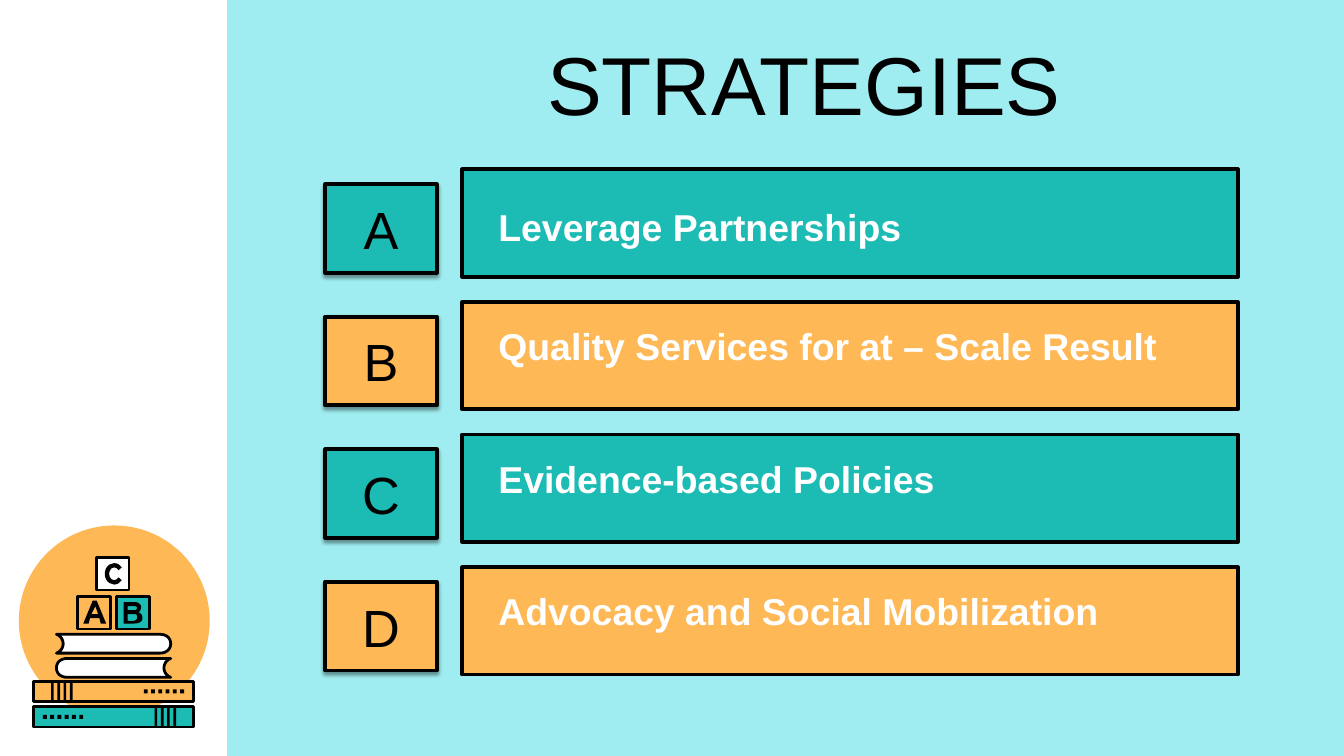
from dataclasses import dataclass

from lxml import etree
from pptx import Presentation
from pptx.dml.color import RGBColor
from pptx.enum.shapes import MSO_SHAPE
from pptx.enum.text import MSO_ANCHOR, PP_ALIGN
from pptx.oxml.ns import qn
from pptx.util import Inches, Pt

RECT, OVAL, ARC = MSO_SHAPE.RECTANGLE, MSO_SHAPE.OVAL, MSO_SHAPE.BLOCK_ARC
TOP, MIDDLE = MSO_ANCHOR.TOP, MSO_ANCHOR.MIDDLE
CENTER, LEFT = PP_ALIGN.CENTER, PP_ALIGN.LEFT
COLORS = {"sky": "9FEDF0", "teal": "1CBBB4", "gold": "FEB856",
          "black": "000000", "white": "FFFFFF"}
WIDTH = 10
HEIGHT = WIDTH * 9 / 16
PITCH = 2.96 / 3
BOOK_LEFT, BOOK_WIDTH = 0.25, 1.19
MIRROR = 2 * BOOK_LEFT + BOOK_WIDTH


@dataclass
class Row:
    letter: str
    label: str
    color: str
    width: float
    drop: float = 0


@dataclass
class Block:
    left: float
    top: float
    color: str


ROWS = [
    Row("A", "Leverage Partnerships", "teal", 5.48, 0.1),
    Row("B", "Quality Services for at – Scale Result", "gold", 5.98),
    Row("C", "Evidence-based Policies", "teal", 5.2),
    Row("D", "Advocacy and Social Mobilization", "gold", 5.2),
]
BLOCKS = [Block(0.58, 4.44, "gold"), Block(0.87, 4.44, "teal"),
          Block(0.72, 4.15, "white")]
LETTER_A = [
    [(0.71, 4.51), (0.68, 4.57), (0.73, 4.57)],
    [(0.69, 4.47), (0.72, 4.47), (0.79, 4.64), (0.75, 4.64),
     (0.74, 4.6), (0.67, 4.6), (0.66, 4.64), (0.62, 4.64)],
]
LETTER_B = [
    [(0.95, 4.57), (0.95, 4.62), (1, 4.62),
     (1.02, 4.61, 1.02, 4.61, 1.02, 4.59), (1.02, 4.58, 1.02, 4.57, 1, 4.57)],
    [(0.95, 4.51), (0.95, 4.54), (1, 4.54),
     (1.01, 4.54, 1.02, 4.54, 1.02, 4.52), (1.02, 4.52, 1.01, 4.51, 1, 4.51)],
    [(0.92, 4.48), (1, 4.48), (1.04, 4.48, 1.05, 4.51, 1.05, 4.51),
     (1.05, 4.54, 1.04, 4.55, 1.03, 4.56), (1.05, 4.56, 1.06, 4.58, 1.06, 4.6),
     (1.06, 4.63, 1.03, 4.64, 1, 4.64), (0.92, 4.64)],
]
OPEN_BOOK = [
    [(0.42, 4.72), (1.19, 4.72), (1.24, 4.72, 1.27, 4.75, 1.27, 4.79),
     (1.27, 4.83, 1.24, 4.86, 1.19, 4.86), (0.42, 4.86),
     (0.45, 4.85, 0.47, 4.82, 0.47, 4.79), (0.47, 4.76, 0.45, 4.73, 0.42, 4.72)],
]


def paint(shape, fill: str, line: float = 0) -> None:
    """Set a shape's fill and black outline, without shadow."""
    shape.shadow.inherit = False
    shape.fill.solid()
    shape.fill.fore_color.rgb = RGBColor.from_string(COLORS[fill])
    if line:
        shape.line.color.rgb = RGBColor.from_string(COLORS["black"])
        shape.line.width = Pt(line)
    else:
        shape.line.fill.background()


def draw(slide, kind, left: float, top: float, width: float, height: float,
         fill: str, line: float = 0):
    """Draw a preset shape."""
    shape = slide.shapes.add_shape(
        kind, Inches(left), Inches(top), Inches(width), Inches(height))
    paint(shape, fill, line)
    return shape


def trace(contour: list) -> list:
    """Turn corners and cubic curves into a list of points."""
    points = []
    for part in contour:
        if len(part) == 2:
            points.append(part)
            continue
        start = points[-1]
        for step in range(1, 9):
            t = step / 8
            u = 1 - t
            points.append(tuple(
                u**3 * start[k] + 3 * u * u * t * part[k]
                + 3 * u * t * t * part[k + 2] + t**3 * part[k + 4]
                for k in (0, 1)))
    return points


def outline(slide, contours: list, fill: str, line: float = 0,
            turn: float = 0) -> None:
    """Draw closed contours, turned half round when a vertical sum is given."""
    pen = None
    for contour in contours:
        points = [(Inches(MIRROR - x), Inches(turn - y)) if turn
                  else (Inches(x), Inches(y)) for x, y in trace(contour)]
        if pen is None:
            pen = slide.shapes.build_freeform(*points[0], scale=1.0)
        else:
            pen.move_to(*points[0])
        pen.add_line_segments(points[1:], close=True)
    paint(pen.convert_to_shape(), fill, line)


def write(shape, text: str, size: float, color: str, align, anchor,
          bold: bool = False, wrap: bool = True) -> None:
    """Put one formatted line of text in a shape."""
    frame = shape.text_frame
    frame.text = text
    frame.word_wrap = wrap
    frame.vertical_anchor = anchor
    line = frame.paragraphs[0]
    line.alignment = align
    font = line.runs[0].font
    font.name, font.size, font.bold = "Arial", Pt(size), bold
    font.color.rgb = RGBColor.from_string(COLORS[color])


def cast(shape) -> None:
    """Give a shape a soft shadow below it."""
    effects = shape.element.spPr.find(qn("a:effectLst"))
    shadow = etree.SubElement(
        effects, qn("a:outerShdw"), blurRad=str(Pt(2)), dist=str(Pt(1.5)),
        dir="5400000", algn="ctr", rotWithShape="0")
    tint = etree.SubElement(shadow, qn("a:srgbClr"), val=COLORS["black"])
    etree.SubElement(tint, qn("a:alpha"), val="40000")


def shelve(slide, top: float, color: str, flip: bool) -> None:
    """Draw a lying book with its stripes and dashes."""
    draw(slide, RECT, BOOK_LEFT, top, BOOK_WIDTH, 0.15, color, 1.5)
    marks = [(0.38 + 0.14 * i / 3, 0, 0.02, 0.15) for i in range(4)]
    marks += [(1.07 + 0.27 * i / 5, 0.06, 0.03, 0.03) for i in range(6)]
    for left, drop, width, height in marks:
        place = MIRROR - left - width if flip else left
        draw(slide, RECT, place, top + drop, width, height, "black")


def stack(slide) -> None:
    """Draw the books and letter blocks on their disc."""
    draw(slide, OVAL, 0.14, 3.91, 1.42, 1.42, "gold")
    shelve(slide, 5.07, "gold", False)
    shelve(slide, 5.26, "teal", True)
    for block in BLOCKS:
        draw(slide, RECT, block.left, block.top, 0.24, 0.24, block.color, 1.5)
    outline(slide, LETTER_A, "black")
    outline(slide, LETTER_B, "black")
    arc = draw(slide, ARC, 0.78, 4.19, 0.14, 0.16, "black")
    for index, value in enumerate((24, 192, 0.23)):
        arc.adjustments[index] = value
    outline(slide, OPEN_BOOK, "white", 1.5)
    outline(slide, OPEN_BOOK, "white", 1.5, turn=9.76)


def label(slide, left: float, top: float, width: float, height: float):
    """Add an empty text box."""
    return slide.shapes.add_textbox(
        Inches(left), Inches(top), Inches(width), Inches(height))


def list_row(slide, row: Row, shift: float) -> None:
    """Draw a lettered tile beside its labelled bar."""
    tile = draw(slide, RECT, 2.42, 1.37 + shift, 0.83, 0.66, row.color, 2)
    cast(tile)
    write(tile, row.letter, 28, "black", CENTER, MIDDLE, wrap=False)
    draw(slide, RECT, 3.44, 1.26 + shift, 5.77, 0.8, row.color, 2)
    box = label(slide, 3.61, 1.37 + row.drop + shift, row.width, 0.44)
    write(box, row.label, 20, "white", LEFT, TOP, bold=True)


def main() -> None:
    """Build the strategies slide."""
    deck = Presentation()
    deck.slide_width, deck.slide_height = Inches(WIDTH), Inches(HEIGHT)
    slide = deck.slides.add_slide(deck.slide_layouts[6])
    draw(slide, RECT, 1.69, 0, WIDTH - 1.69, HEIGHT, "sky")
    stack(slide)
    title = label(slide, 1.95, 0.19, 8.07, 0.85)
    write(title, "STRATEGIES", 44, "black", CENTER, MIDDLE)
    for index, row in enumerate(ROWS):
        list_row(slide, row, index * PITCH)
    deck.save("out.pptx")


if __name__ == "__main__":
    main()
